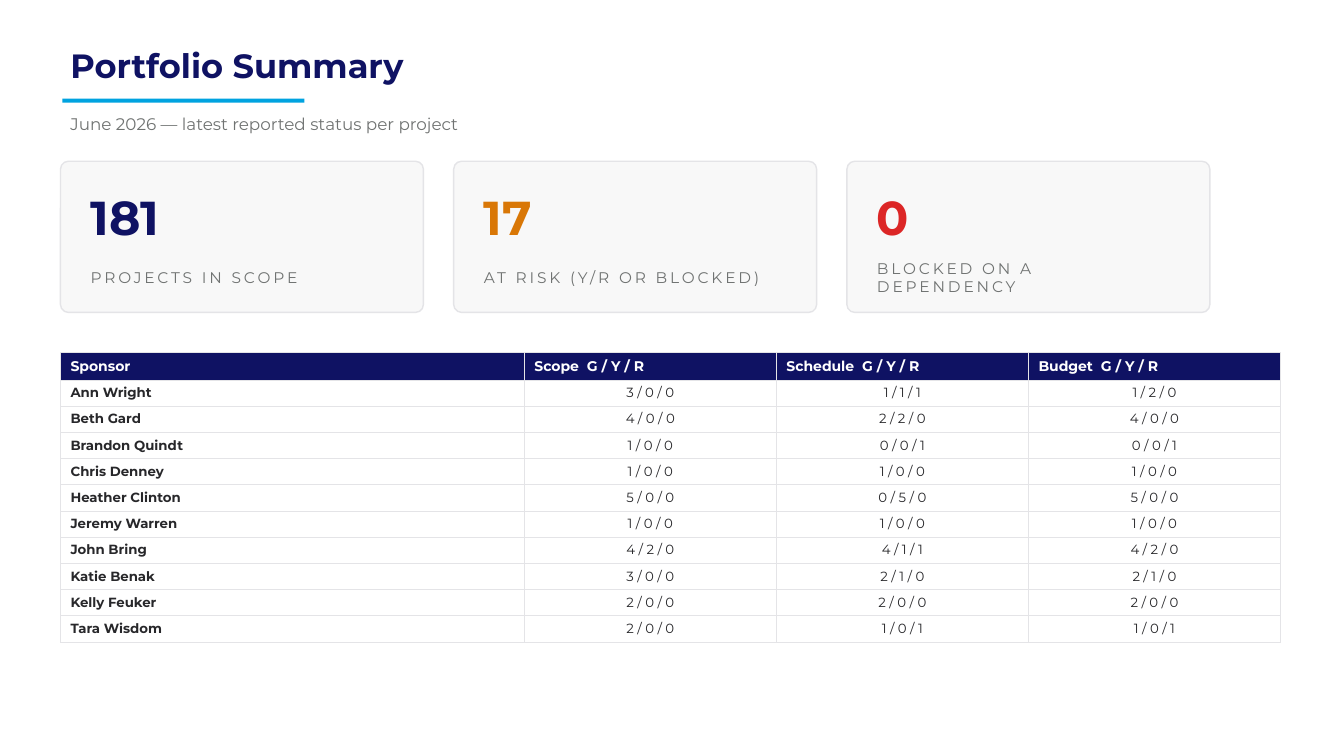
from lxml.etree import SubElement
from pptx import Presentation
from pptx.dml.color import RGBColor
from pptx.enum.shapes import MSO_SHAPE as Shape
from pptx.enum.text import MSO_ANCHOR as Anchor, PP_ALIGN as Align
from pptx.oxml.ns import qn
from pptx.util import Pt

EMU_PER_PX = 9144  # 100 px to the inch
COLORS = {
    "navy": "0F1263", "cyan": "00A3E0", "gray": "707372", "panel": "F8F8F8",
    "border": "E4E4E7", "amber": "D97706", "red": "DC2626", "ink": "27272A",
    "white": "FFFFFF",
}
CARDS = [
    ("181", "PROJECTS IN SCOPE", "navy"),
    ("17", "AT RISK (Y/R OR BLOCKED)", "amber"),
    ("0", "BLOCKED ON A DEPENDENCY", "red"),
]
HEADER = ["Sponsor", "Scope  G / Y / R", "Schedule  G / Y / R", "Budget  G / Y / R"]
SPONSORS = [
    ("Ann Wright", "3 / 0 / 0", "1 / 1 / 1", "1 / 2 / 0"),
    ("Beth Gard", "4 / 0 / 0", "2 / 2 / 0", "4 / 0 / 0"),
    ("Brandon Quindt", "1 / 0 / 0", "0 / 0 / 1", "0 / 0 / 1"),
    ("Chris Denney", "1 / 0 / 0", "1 / 0 / 0", "1 / 0 / 0"),
    ("Heather Clinton", "5 / 0 / 0", "0 / 5 / 0", "5 / 0 / 0"),
    ("Jeremy Warren", "1 / 0 / 0", "1 / 0 / 0", "1 / 0 / 0"),
    ("John Bring", "4 / 2 / 0", "4 / 1 / 1", "4 / 2 / 0"),
    ("Katie Benak", "3 / 0 / 0", "2 / 1 / 0", "2 / 1 / 0"),
    ("Kelly Feuker", "2 / 0 / 0", "2 / 0 / 0", "2 / 0 / 0"),
    ("Tara Wisdom", "2 / 0 / 0", "1 / 0 / 1", "1 / 0 / 1"),
]


def px(*lengths):
    return [length * EMU_PER_PX for length in lengths]


def color(name):
    return RGBColor.from_string(COLORS[name])


class SlideBuilder:
    font = "Montserrat"

    def __init__(self, page):
        self.page = page

    def style(self, frame, size, tone, bold=False, spacing=0):
        for span in frame.paragraphs[0].runs:
            span.font.name = self.font
            span.font.size = Pt(size)
            span.font.bold = bold
            span.font.color.rgb = color(tone)
            if spacing:
                span._r.get_or_add_rPr().set("spc", str(spacing * 100))

    def text(self, place, words, size, tone, **options):
        frame = self.page.shapes.add_textbox(*px(*place)).text_frame
        frame.word_wrap = True
        frame.vertical_anchor = Anchor.MIDDLE
        frame.text = words
        self.style(frame, size, tone, **options)

    def panel(self, kind, place, fill, line=None):
        box = self.page.shapes.add_shape(kind, *px(*place))
        box.shadow.inherit = False
        box.fill.solid()
        box.fill.fore_color.rgb = color(fill)
        if line:
            box.line.color.rgb = color(line)
            box.line.width = Pt(1)
        else:
            box.line.fill.background()
        return box

    def card(self, left, top, value, label, tone):
        box = self.panel(Shape.ROUNDED_RECTANGLE, (left, top, 360, 150), "panel", "border")
        box.adjustments[0] = 0.053
        self.text((left + 20, top + 15, 320, 80), value, 34, tone, bold=True)
        self.text((left + 20, top + 95, 320, 40), label, 11, "gray", spacing=2)

    def cell_borders(self, cell):
        properties = cell._tc.get_or_add_tcPr()
        for side in ("a:lnL", "a:lnR", "a:lnT", "a:lnB"):
            line = SubElement(properties, qn(side), w=str(Pt(0.5)))
            fill = SubElement(line, qn("a:solidFill"))
            SubElement(fill, qn("a:srgbClr"), val=COLORS["border"])

    def table(self, left, top, widths, header_height, row_height, rows):
        height = header_height + row_height * (len(rows) - 1)
        place = px(left, top, sum(widths), height)
        table = self.page.shapes.add_table(len(rows), len(widths), *place).table
        table.horz_banding = False
        for column, width in zip(table.columns, px(*widths)):
            column.width = width
        for i, values in enumerate(rows):
            is_header = i == 0
            table.rows[i].height = px(header_height if is_header else row_height)[0]
            for j, value in enumerate(values):
                cell = table.cell(i, j)
                self.cell_borders(cell)
                cell.fill.solid()
                cell.fill.fore_color.rgb = color("navy" if is_header else "white")
                cell.text_frame.text = value
                if is_header:
                    self.style(cell.text_frame, 10, "white", bold=True)
                else:
                    self.style(cell.text_frame, 9.5, "ink", bold=j == 0)
                    if j > 0:
                        cell.text_frame.paragraphs[0].alignment = Align.CENTER


def main():
    deck = Presentation()
    deck.slide_width, deck.slide_height = px(1333, 750)
    builder = SlideBuilder(deck.slides.add_slide(deck.slide_layouts[6]))

    # Heading
    builder.text((60, 35, 1213, 60), "Portfolio Summary", 24, "navy", bold=True)
    builder.panel(Shape.RECTANGLE, (62, 98, 240, 4), "cyan")
    builder.text((60, 105, 1213, 35), "June 2026 — latest reported status per project", 12, "gray")

    # Key figures
    for i, (value, label, tone) in enumerate(CARDS):
        builder.card(60 + 390 * i, 160, value, label, tone)

    # Status by sponsor
    builder.table(60, 350, [460, 250, 250, 250], 27, 26, [HEADER, *SPONSORS])

    deck.save("out.pptx")


if __name__ == "__main__":
    main()
